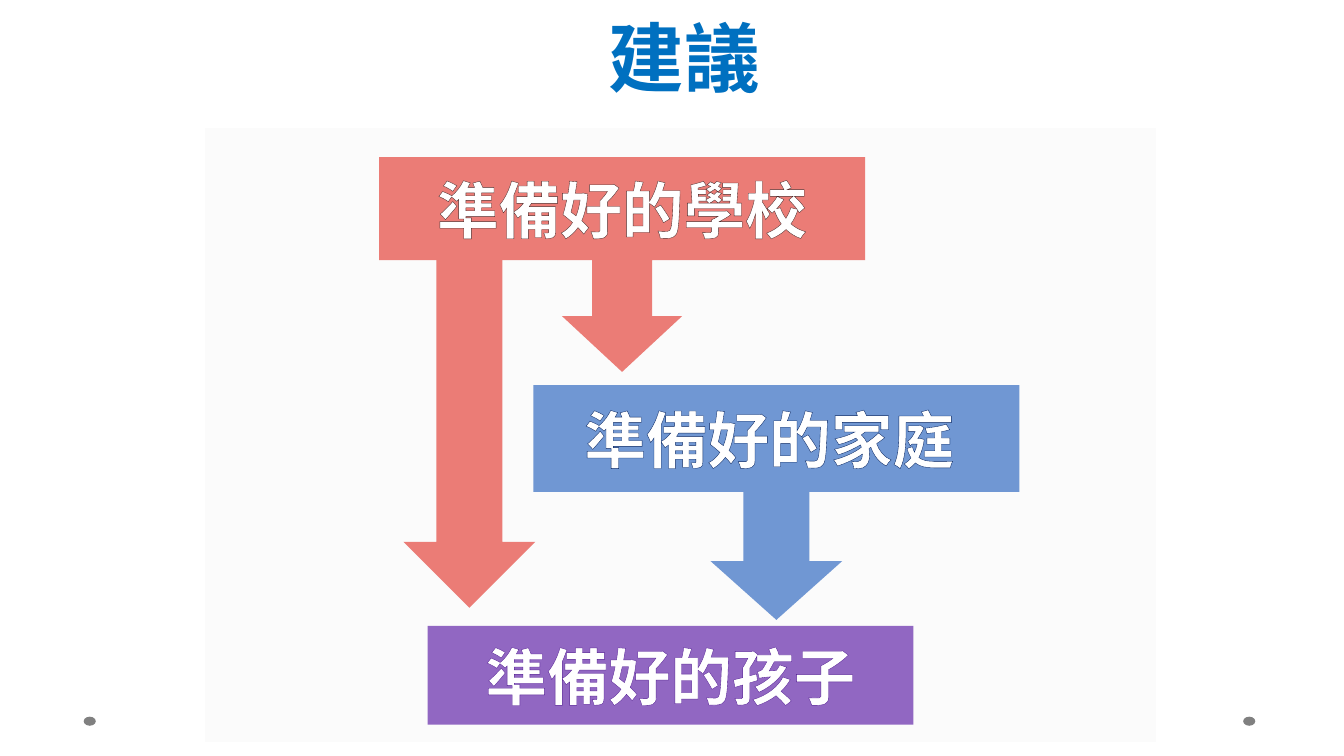
"""Build the advice slide: prepared schools and families lead to prepared children."""
from dataclasses import dataclass
from typing import Optional

from lxml import etree
from pptx import Presentation
from pptx import util as u
from pptx.dml.color import RGBColor
from pptx.enum import shapes, text
from pptx.oxml import ns

EMU_PER_PX = 9144
COLORS = {
    "white": "FFFFFF",
    "panel": "E8E8E8",
    "dot": "808080",
    "title": "0070C0",
    "school": "EB7C76",
    "family": "7097D3",
    "child": "9167C2",
    "school_outline": "4E2929",
    "family_outline": "002060",
    "child_outline": "521B93",
}
KIND = shapes.MSO_SHAPE


@dataclass(frozen=True)
class Block:
    kind: shapes.MSO_SHAPE
    box: tuple[int, int, int, int]
    fill: str
    adjustments: tuple[float, ...] = ()
    label: str = ""
    outline: str = ""
    opacity: Optional[int] = None
    border: str = ""


BLOCKS = [
    Block(KIND.OVAL, (1233, 711, 12, 9), "dot"),
    Block(KIND.OVAL, (83, 711, 12, 9), "dot"),
    Block(KIND.RECTANGLE, (202, 125, 946, 613), "panel", opacity=15, border="white"),
    Block(KIND.DOWN_ARROW, (400, 231, 131, 372), "school"),
    Block(KIND.DOWN_ARROW_CALLOUT, (376, 156, 482, 213), "school",
          (0.28, 0.28, 0.26, 0.48), "準備好的學校", "school_outline"),
    Block(KIND.DOWN_ARROW_CALLOUT, (529, 382, 482, 233), "family",
          (0.28, 0.28, 0.25, 0.455), "準備好的家庭 ", "family_outline"),
    Block(KIND.RECTANGLE, (424, 621, 482, 98), "child",
          label="準備好的孩子", outline="child_outline"),
]


def px(length: int) -> u.Emu:
    return u.Emu(length * EMU_PER_PX)


def rgb(name: str) -> RGBColor:
    return RGBColor.from_string(COLORS[name])


def paint(shape, color: str, opacity: Optional[int] = None) -> None:
    shape.fill.solid()
    shape.fill.fore_color.rgb = rgb(color)
    if opacity is not None:
        tint = shape.fill._xPr.find(".//" + ns.qn("a:srgbClr"))
        etree.SubElement(tint, ns.qn("a:alpha"), val=str(opacity * 1000))


def write(shape, content: str, *, size: int, font: str, color: str, anchor,
          outline: str = "", line_spacing: Optional[int] = None) -> None:
    frame = shape.text_frame
    frame.word_wrap = True
    frame.auto_size = text.MSO_AUTO_SIZE.NONE
    frame.vertical_anchor = anchor
    paragraph = frame.paragraphs[0]
    paragraph.alignment = text.PP_ALIGN.CENTER
    if line_spacing:
        paragraph.line_spacing = u.Pt(line_spacing)
    run = paragraph.add_run()
    run.text = content
    run.font.size = u.Pt(size)
    run.font.name = font
    run.font.bold = True
    run.font.color.rgb = rgb(color)
    if outline:
        line = etree.Element(ns.qn("a:ln"), w=str(u.Pt(1.5)))
        fill = etree.SubElement(line, ns.qn("a:solidFill"))
        etree.SubElement(fill, ns.qn("a:srgbClr"), val=COLORS[outline])
        run.font._element.insert(0, line)


def draw_block(slide, block: Block) -> None:
    shape = slide.shapes.add_shape(block.kind, *map(px, block.box))
    shape.shadow.inherit = False
    paint(shape, block.fill, block.opacity)
    if block.border:
        shape.line.color.rgb = rgb(block.border)
        shape.line.width = u.Pt(2.25)
    else:
        shape.line.fill.background()
    for index, value in enumerate(block.adjustments):
        shape.adjustments[index] = value
    if block.label:
        write(shape, block.label, size=44, font="Arial", color="white",
              anchor=text.MSO_ANCHOR.MIDDLE, outline=block.outline)


def draw_title(slide) -> None:
    title = slide.shapes.title
    title.left, title.top, title.width, title.height = map(px, (568, 0, 222, 106))
    paint(title, "white", 70)
    write(title, "建議", size=54, font="TeX Gyre Pagella", color="title",
          anchor=text.MSO_ANCHOR.BOTTOM, line_spacing=58)


def main() -> None:
    presentation = Presentation()
    presentation.slide_width, presentation.slide_height = px(1333), px(750)
    slide = presentation.slides.add_slide(presentation.slide_layouts[5])
    draw_title(slide)
    for block in BLOCKS:
        draw_block(slide, block)
    presentation.save("out.pptx")


if __name__ == "__main__":
    main()
